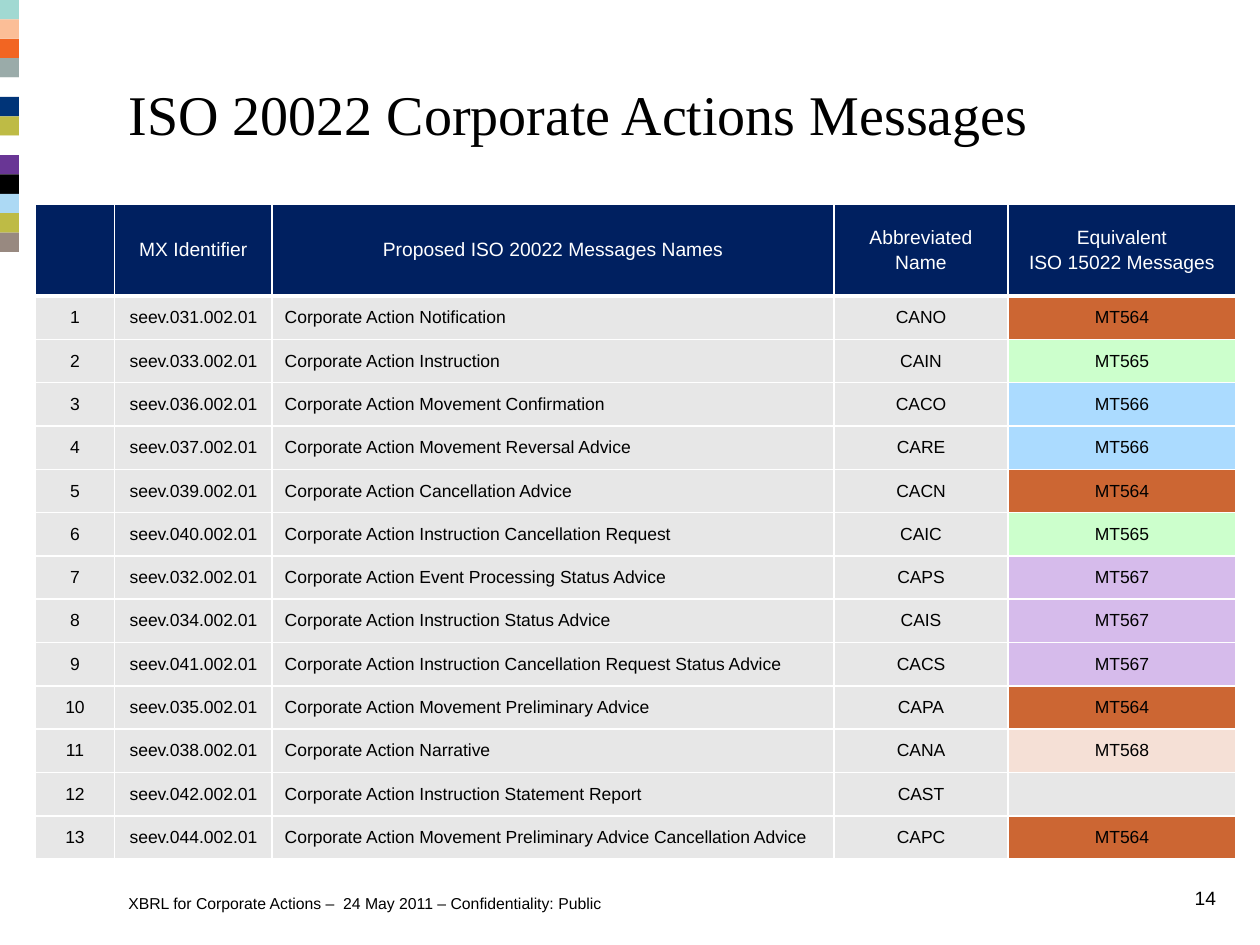
from lxml.etree import SubElement
from pptx import Presentation
from pptx.dml.color import RGBColor
from pptx.enum.shapes import MSO_SHAPE
from pptx.enum.text import MSO_ANCHOR, PP_ALIGN
from pptx.oxml.ns import qn
from pptx.util import Inches, Pt

THEME = {
    "title_font": "Times New Roman", "body_font": "Arial",
    "title": 32, "header": 11, "body": 10, "footer": 9, "number": 11,
    "black": "000000", "white": "FFFFFF", "navy": "002060", "grey": "E7E7E7",
    "messages": {"MT564": "CC6633", "MT565": "CCFFCC", "MT566": "ABDBFF",
                 "MT567": "D6BBEB", "MT568": "F5E0D6"},
    "strip": ["A1D9D2", "FBBE97", "F26522", "9AABA9", "FFFFFF", "003478", "BEBB45",
              "FFFFFF", "693695", "000000", "ACD9F4", "BEBB45", "988980"],
}


def write(tf, text, size, color, align=PP_ALIGN.LEFT, font=THEME["body_font"]):
    tf.text = text
    for i, p in enumerate(tf.paragraphs):
        p.alignment = align
        p.space_before = Pt(0.2 * size if i else 0)
        p.font.size = Pt(size)
        for r in p.runs:
            r.font.name = font
            r.font.size = Pt(size)
            r.font.color.rgb = RGBColor.from_string(color)


def add_borders(cell, bottom):
    tcPr = cell._tc.get_or_add_tcPr()
    for i, (side, width) in enumerate([("L", 1), ("R", 1), ("T", 1), ("B", bottom)]):
        ln = SubElement(tcPr, qn(f"a:ln{side}"), w=str(Pt(width)))
        SubElement(SubElement(ln, qn("a:solidFill")), qn("a:srgbClr"), val=THEME["white"])
        tcPr.insert(i, ln)  # borders come before the fill


prs = Presentation()
prs.slide_width, prs.slide_height = Inches(10), Inches(7.5)
s = prs.slides.add_slide(prs.slide_layouts[5])

# Colour strip on the left edge
side = 2 / len(THEME["strip"])
for i, color in enumerate(THEME["strip"]):
    sp = s.shapes.add_shape(MSO_SHAPE.RECTANGLE, 0, Inches(i * side), Inches(0.15), Inches(side))
    sp.shadow.inherit = False
    sp.fill.solid()
    sp.fill.fore_color.rgb = RGBColor.from_string(color)
    sp.line.fill.background()

# Title
title = s.shapes.title
title.left, title.top, title.width, title.height = (Inches(v) for v in (0.92, 0.58, 8.33, 1.25))
title.text_frame.vertical_anchor = MSO_ANCHOR.TOP
write(title.text_frame, "ISO 20022 Corporate Actions Messages", THEME["title"],
      THEME["black"], font=THEME["title_font"])

# Message table
headers = ["", "MX Identifier", "Proposed ISO 20022 Messages Names",
           "Abbreviated\nName", "Equivalent\nISO 15022 Messages"]
messages = [
    ("031", "Notification", "CANO", "MT564"),
    ("033", "Instruction", "CAIN", "MT565"),
    ("036", "Movement Confirmation", "CACO", "MT566"),
    ("037", "Movement Reversal Advice", "CARE", "MT566"),
    ("039", "Cancellation Advice", "CACN", "MT564"),
    ("040", "Instruction Cancellation Request", "CAIC", "MT565"),
    ("032", "Event Processing Status Advice", "CAPS", "MT567"),
    ("034", "Instruction Status Advice", "CAIS", "MT567"),
    ("041", "Instruction Cancellation Request Status Advice", "CACS", "MT567"),
    ("035", "Movement Preliminary Advice", "CAPA", "MT564"),
    ("038", "Narrative", "CANA", "MT568"),
    ("042", "Instruction Statement Report", "CAST", ""),
    ("044", "Movement Preliminary Advice Cancellation Advice", "CAPC", "MT564"),
]
rows = [headers] + [
    [str(n), f"seev.{code}.002.01", f"Corporate Action {name}", abbreviation, equivalent]
    for n, (code, name, abbreviation, equivalent) in enumerate(messages, 1)]

col_widths = [0.63, 1.25, 4.46, 1.38, 1.81]
table_height, header_height = 5.2, 0.73
table = s.shapes.add_table(len(rows), len(headers), Inches(0.28), Inches(1.62),
                           Inches(sum(col_widths)), Inches(table_height)).table
for col, width in zip(table.columns, col_widths):
    col.width = Inches(width)
for row in table.rows:
    row.height = Inches((table_height - header_height) / len(messages))
table.rows[0].height = Inches(header_height)

for i, values in enumerate(rows):
    for j, text in enumerate(values):
        cell = table.cell(i, j)
        is_header = i == 0
        fill = THEME["navy"] if is_header else THEME["messages"].get(text, THEME["grey"])
        cell.fill.solid()
        cell.fill.fore_color.rgb = RGBColor.from_string(fill)
        cell.vertical_anchor = MSO_ANCHOR.MIDDLE
        cell.margin_top = cell.margin_bottom = Inches(0.02)
        write(cell.text_frame, text, THEME["header" if is_header else "body"],
              THEME["white" if is_header else "black"],
              PP_ALIGN.LEFT if j == 2 and not is_header else PP_ALIGN.CENTER)
        add_borders(cell, bottom=3 if is_header else 1)

# Footer and slide number
for left, top, width, text, size, align in [
    (0.92, 7.04, 6.21, "XBRL for Corporate Actions –  24 May 2011 – Confidentiality: Public",
     THEME["footer"], PP_ALIGN.LEFT),
    (8.92, 7, 0.83, "14", THEME["number"], PP_ALIGN.RIGHT),
]:
    tf = s.shapes.add_textbox(Inches(left), Inches(top), Inches(width), Inches(0.25)).text_frame
    tf.word_wrap = True
    tf.vertical_anchor = MSO_ANCHOR.MIDDLE
    write(tf, text, size, THEME["black"], align)

prs.save("out.pptx")
